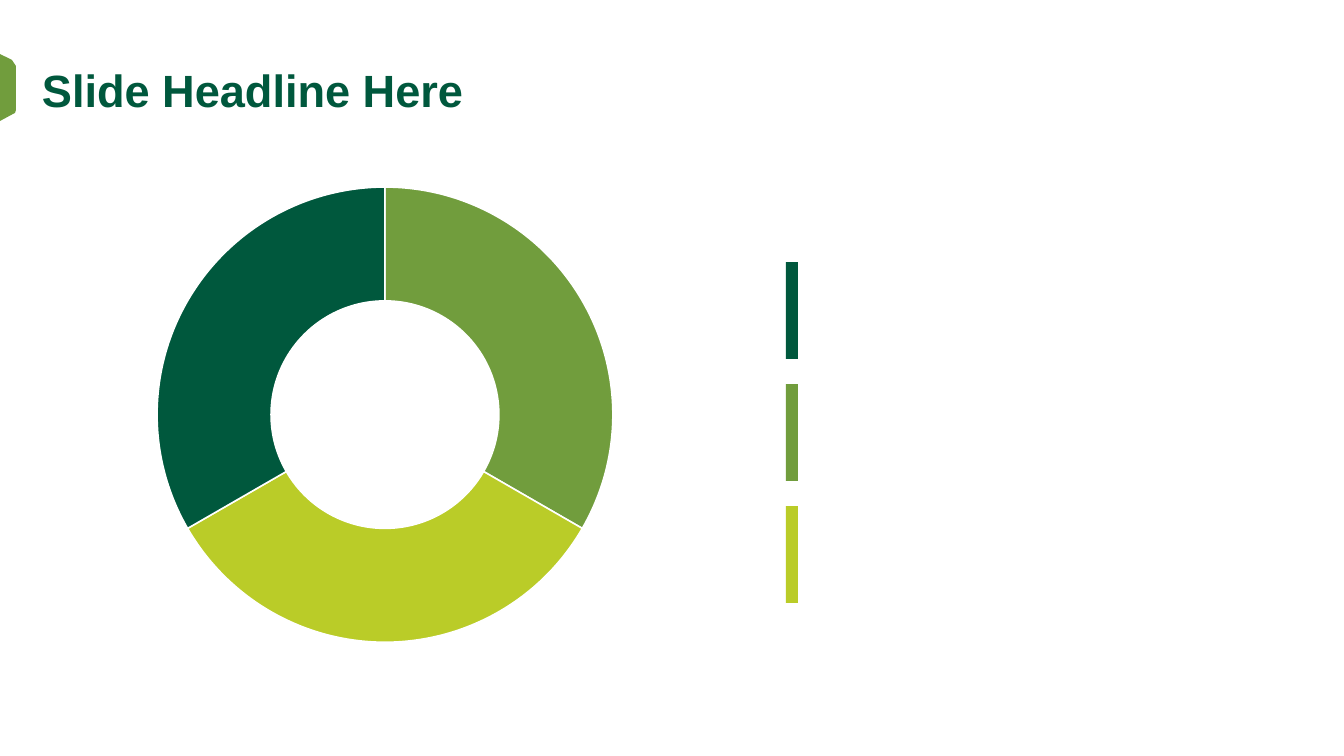
from lxml import etree
from pptx import Presentation
from pptx.chart.data import CategoryChartData
from pptx.dml.color import RGBColor
from pptx.enum.chart import XL_CHART_TYPE
from pptx.enum.shapes import MSO_SHAPE
from pptx.enum.text import MSO_ANCHOR, PP_ALIGN
from pptx.oxml import parse_xml
from pptx.oxml.ns import nsdecls, qn
from pptx.util import Pt

PX = 914400 / 75.6
COLORS = {"dark": "00583D", "green": "719D3D", "lime": "BACC28",
          "white": "FFFFFF", "black": "000000"}


def emu(*lengths):
    return [round(n * PX) for n in lengths]


def rgb(name):
    return RGBColor.from_string(COLORS[name])


def write(tf, text, *, size, color, font="Arial", bold=False, align=PP_ALIGN.LEFT):
    p = tf.paragraphs[0]
    p.alignment = align
    r = p.add_run()
    r.text = text
    r.font.name, r.font.size, r.font.bold = font, Pt(size), bold
    r.font.color.rgb = rgb(color)


class Deck:
    def __init__(self, width, height):
        self.prs = Presentation()
        self.prs.slide_width, self.prs.slide_height = emu(width, height)
        self.s = self.prs.slides.add_slide(self.prs.slide_layouts[5])

    def paint(self, sp, color):
        sp.shadow.inherit = False
        sp.fill.solid()
        sp.fill.fore_color.rgb = rgb(color)
        sp.line.fill.background()

    def bar(self, x, y, w, h, color):
        sp = self.s.shapes.add_shape(MSO_SHAPE.RECTANGLE, *emu(x, y, w, h))
        self.paint(sp, color)

    def outline(self, points, color):
        builder = self.s.shapes.build_freeform(*points[0], scale=PX)
        builder.add_line_segments(points[1:], close=True)
        self.paint(builder.convert_to_shape(), color)

    def title(self, text, x, y, w, h):
        sp = self.s.shapes.title
        sp.left, sp.top, sp.width, sp.height = emu(x, y, w, h)
        tf = sp.text_frame
        tf.margin_left = tf.margin_top = tf.margin_right = tf.margin_bottom = 0
        tf.word_wrap = True
        tf.vertical_anchor = MSO_ANCHOR.BOTTOM
        write(tf, text, size=43, color="dark", bold=True)

    def doughnut(self, x, y, w, h, slices, layout, hole):
        """Draw slices of (category, value, color); layout holds plot fractions x, y, w, h."""
        data = CategoryChartData()
        data.categories = [category for category, _, _ in slices]
        data.add_series("Series 1", [value for _, value, _ in slices])
        frame = self.s.shapes.add_chart(XL_CHART_TYPE.DOUGHNUT, *emu(x, y, w, h), data)
        chart = frame.chart
        chart.has_legend = chart.has_title = False
        chart.font.name, chart.font.size = "Calibri", Pt(10)
        chart.font.color.rgb = rgb("black")
        plot = chart.plots[0]
        plot.vary_by_categories = True
        for i, (_, _, color) in enumerate(slices):
            fmt = plot.series[0].points[i].format
            fmt.fill.solid()
            fmt.fill.fore_color.rgb = rgb(color)
            fmt.line.color.rgb = rgb("white")
            fmt.line.width = Pt(1.5)
        area = chart._chartSpace.chart.plotArea
        area.find(".//" + qn("c:holeSize")).set("val", str(hole))
        for old in area.findall(qn("c:layout")):
            area.remove(old)
        node = parse_xml(f"<c:layout {nsdecls('c')}><c:manualLayout/></c:layout>")
        settings = [("layoutTarget", "inner"), ("xMode", "edge"), ("yMode", "edge"),
                    *zip("xywh", layout)]
        for tag, value in settings:
            etree.SubElement(node[0], qn("c:" + tag)).set("val", str(value))
        area.insert(0, node)


def main():
    deck = Deck(1344, 756)
    for i, color in enumerate(("dark", "green", "lime")):
        deck.bar(786, 262 + 122 * i, 12, 97, color)
    deck.outline([(0, 54), (0, 121), (13, 114), (15, 113), (16, 110),
                  (16, 66), (14, 63), (12, 60)], "green")
    deck.title("Slide Headline Here", 42, 60, 1235, 57)
    slices = [("1", 33, "green"), ("2", 33, "lime"), ("3", 33, "dark")]
    deck.doughnut(155, 113, 807, 530, slices, layout=(0, 0.14, 0.57, 0.86), hole=45)
    deck.prs.save("out.pptx")


if __name__ == "__main__":
    main()
